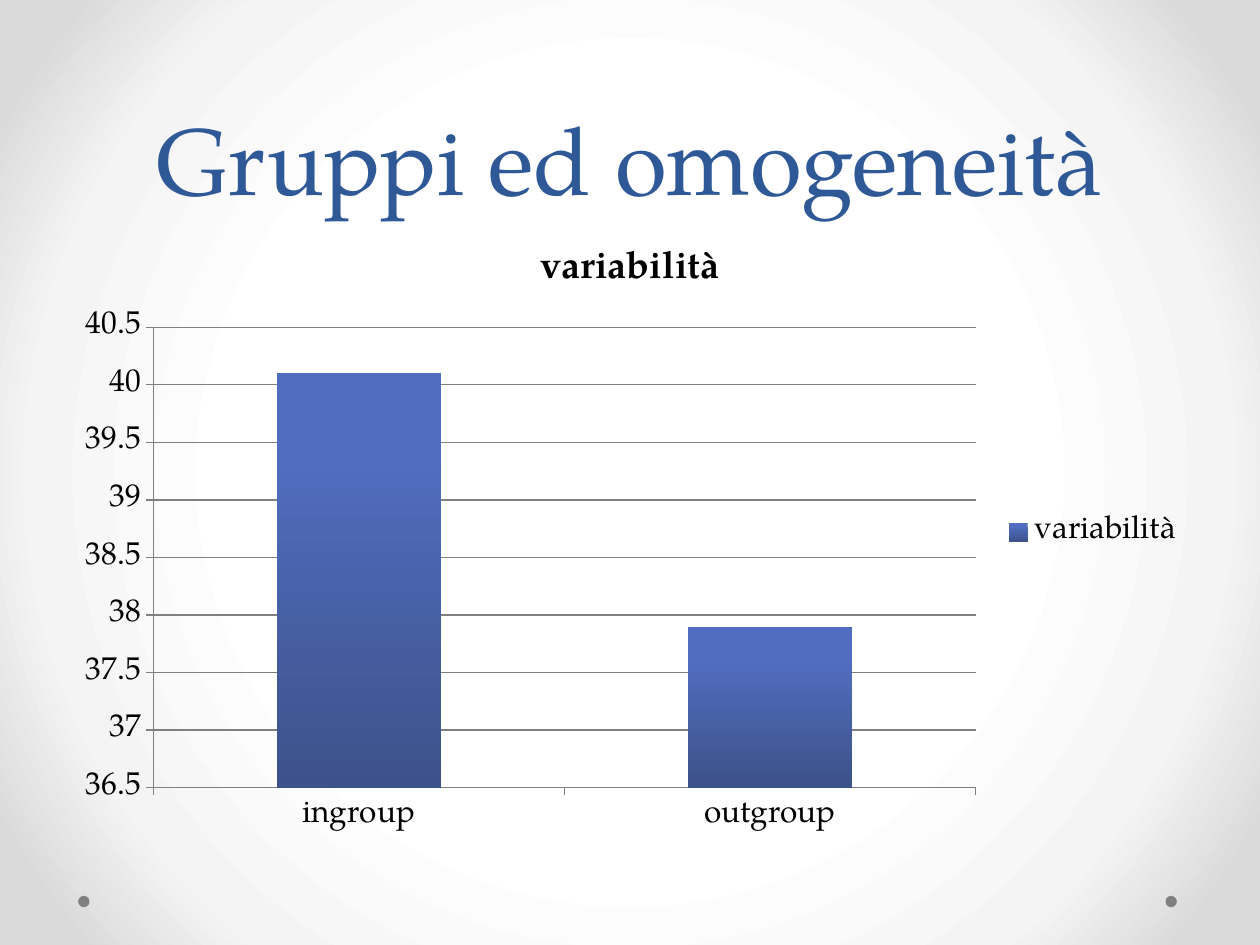
from lxml.etree import SubElement
from pptx import Presentation
from pptx.chart.data import CategoryChartData as ChartData
from pptx.dml.color import RGBColor
from pptx.enum.chart import XL_CHART_TYPE as ChartType
from pptx.enum.chart import XL_LEGEND_POSITION as LegendSide
from pptx.enum.chart import XL_TICK_MARK as TickMark
from pptx.enum.shapes import MSO_SHAPE as Preset
from pptx.enum.text import MSO_ANCHOR as Anchor
from pptx.enum.text import PP_ALIGN as Align
from pptx.oxml.ns import qn
from pptx.util import Inches, Pt

FONT = "TeX Gyre Pagella"
BLUE = RGBColor(0x2F, 0x58, 0x97)
BLACK = RGBColor(0, 0, 0)
GRAY = RGBColor(0x80, 0x80, 0x80)
WHITE = RGBColor(0xFF, 0xFF, 0xFF)
MIST = RGBColor(0xF4, 0xF4, 0xF4)
SILVER = RGBColor(0xDA, 0xDA, 0xDA)
BAR_TOP = RGBColor(0x50, 0x6D, 0xBF)
BAR_BOTTOM = RGBColor(0x3D, 0x52, 0x8A)


def format_font(font, size, color=BLACK, bold=False):
    font.name, font.size, font.bold = FONT, Pt(size), bold
    font.color.rgb = color


def write_text(frame, text, size, color=BLACK, bold=False, align=Align.CENTER, spacing=None):
    para = frame.paragraphs[0]
    para.alignment = align
    if spacing:
        para.line_spacing = Pt(spacing)
    span = para.add_run()
    span.text = text
    format_font(span.font, size, color, bold)


def set_gradient(owner, stops, radial=False):
    """Replace the stops of the owner's gradient; stops are (percent, color)."""
    gradient = owner.find(".//" + qn("a:gradFill"))
    for child in list(gradient):
        gradient.remove(child)
    stop_list = SubElement(gradient, qn("a:gsLst"))
    for percent, color in stops:
        stop = SubElement(stop_list, qn("a:gs"), pos=str(percent * 1000))
        SubElement(stop, qn("a:srgbClr"), val=str(color))
    if radial:
        shade = SubElement(gradient, qn("a:path"))
        shade.set("path", "circle")
        SubElement(shade, qn("a:fillToRect"), {side: "50000" for side in "ltrb"})
    else:
        SubElement(gradient, qn("a:lin"), ang="5400000", scaled="0")


class SlideBuilder:
    """Places elements on one page; lengths are shares of the slide's size."""

    def __init__(self, deck):
        self.width, self.height = deck.slide_width, deck.slide_height
        self.page = deck.slides.add_slide(deck.slide_layouts[5])

    def area(self, left, top, width, height):
        return (int(left * self.width), int(top * self.height),
                int(width * self.width), int(height * self.height))

    def background(self, stops):
        self.page.background.fill.gradient()
        set_gradient(self.page.element, stops, radial=True)

    def title(self, text, *shares):
        box = self.page.shapes.title
        box.left, box.top, box.width, box.height = self.area(*shares)
        box.text_frame.vertical_anchor = Anchor.BOTTOM
        box.text_frame.word_wrap = True
        write_text(box.text_frame, text, size=54, color=BLUE, spacing=58)

    def dot(self, left, top, diameter=Inches(0.09)):
        dot = self.page.shapes.add_shape(
            Preset.OVAL, int(left * self.width), int(top * self.height), diameter, diameter)
        dot.shadow.inherit = False
        dot.fill.solid()
        dot.fill.fore_color.rgb = GRAY
        dot.line.fill.background()

    def column_chart(self, name, values, *shares):
        data = ChartData()
        data.categories = list(values)
        data.add_series(name, list(values.values()))
        chart = self.page.shapes.add_chart(
            ChartType.COLUMN_CLUSTERED, *self.area(*shares), data).chart
        format_font(chart.font, 18)

        # Title and legend
        chart.has_title = True
        write_text(chart.chart_title.text_frame, name, size=21.6, bold=True)
        chart.has_legend = True
        chart.legend.position = LegendSide.RIGHT
        chart.legend.include_in_layout = False

        # Axes
        scale = chart.value_axis
        scale.minimum_scale, scale.maximum_scale, scale.major_unit = 36.5, 40.5, 0.5
        scale.has_major_gridlines = True
        for axis in (chart.category_axis, scale):
            axis.major_tick_mark = TickMark.OUTSIDE
            axis.minor_tick_mark = TickMark.NONE
        for part in (chart.category_axis, scale, scale.major_gridlines):
            part.format.line.color.rgb = GRAY
            part.format.line.width = Pt(0.75)

        # Columns
        plot = chart.plots[0]
        plot.gap_width = 150
        plot.vary_by_categories = False
        series = plot.series[0]
        series.format.fill.gradient()
        set_gradient(series._element, [(0, BAR_TOP), (20, BAR_TOP), (100, BAR_BOTTOM)])


def main():
    deck = Presentation()
    deck.slide_width, deck.slide_height = Inches(10), Inches(7.5)
    slide = SlideBuilder(deck)

    # Backdrop with a dot in each lower corner
    slide.background([(50, WHITE), (76, MIST), (92, SILVER)])
    for left in (0.062, 0.925):
        slide.dot(left, 0.948)

    # Title above the chart
    slide.title("Gruppi ed omogeneità", 0.05, 0, 0.9, 0.2333)
    slide.column_chart("variabilità", {"ingroup": 40.1, "outgroup": 37.9},
                       0.05, 0.2333, 0.9, 0.66)
    deck.save("out.pptx")


if __name__ == "__main__":
    main()
